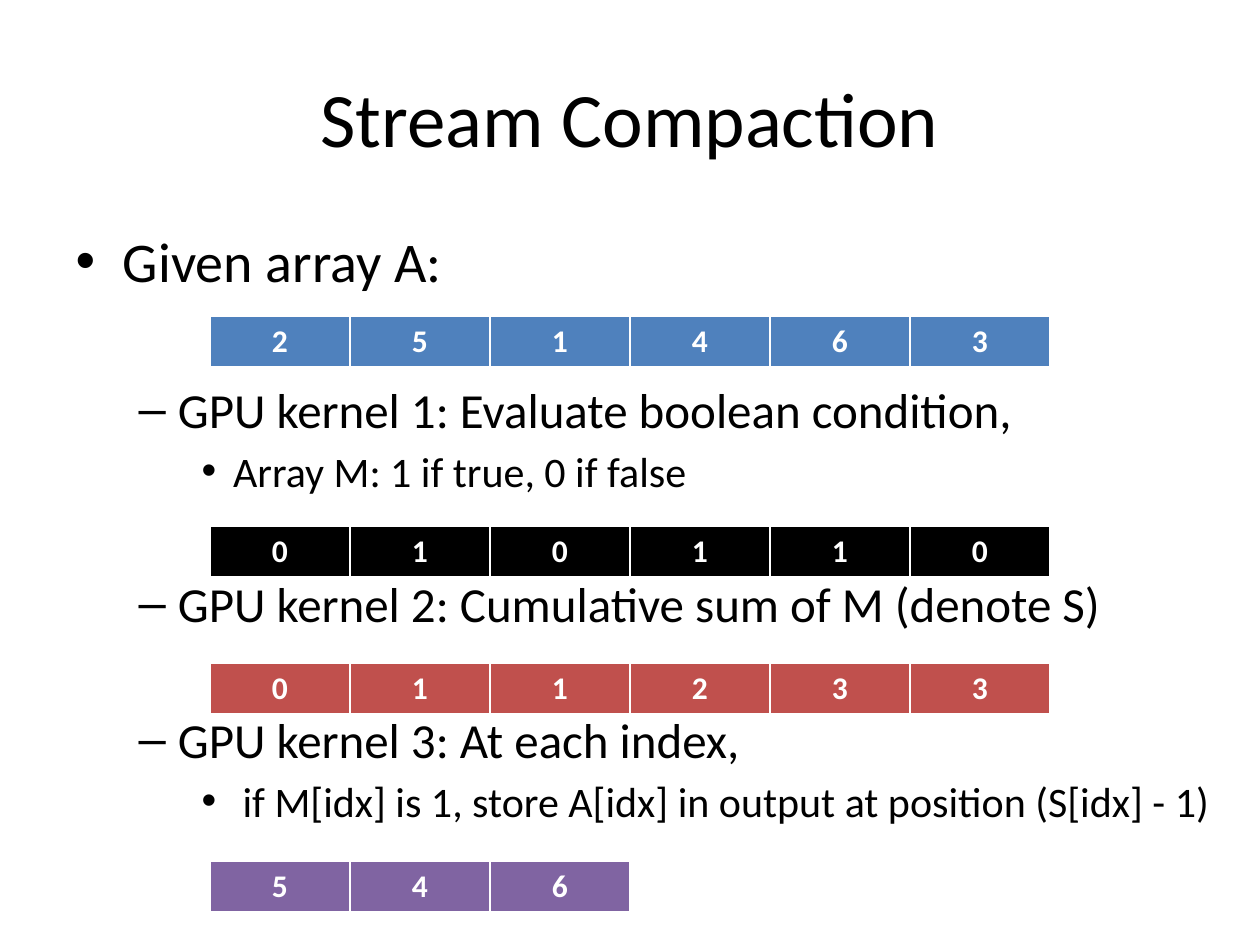
from lxml import etree
from pptx import Presentation
from pptx import util as u
from pptx.dml.color import RGBColor
from pptx.enum import text
from pptx.oxml.ns import qn

COLORS = {"ink": "000000", "white": "FFFFFF", "input": "4F81BD",
          "mask": "000000", "sum": "C0504D", "output": "8064A2"}
FONT = "Calibri"
TITLE = "Stream Compaction"
SIZES = [32, 28, 24]  # by list level

# level, space before in points (None: template default), text
STEPS = [
    (0, None, "Given array A:"),
    (1, 49, "GPU kernel 1: Evaluate boolean condition,"),
    (2, 4, "Array M: 1 if true, 0 if false"),
    (1, 44.5, "GPU kernel 2: Cumulative sum of M (denote S)"),
    (1, 44, "GPU kernel 3: At each index,"),
    (2, 4, " if M[idx] is 1, store A[idx] in output at position (S[idx] - 1)"),
]

# top in px, fill, values
ARRAYS = [
    (316, "input", [2, 5, 1, 4, 6, 3]),
    (526, "mask", [0, 1, 0, 1, 1, 0]),
    (663, "sum", [0, 1, 1, 2, 3, 3]),
    (861, "output", [5, 4, 6]),
]
ARRAY_LEFT, CELL_W, CELL_H = 210, 140, 52
BORDERS = {"lnL": 1, "lnR": 1, "lnT": 1, "lnB": 3}  # points


def px(n):
    return u.Emu(round(n * 914400 / 126))


def place(sp, left, top, width, height):
    sp.left, sp.top, sp.width, sp.height = map(px, (left, top, width, height))


def add_run(p, words, size, color, bold=False):
    r = p.add_run()
    r.text = words
    r.font.name, r.font.size, r.font.bold = FONT, u.Pt(size), bold
    r.font.color.rgb = RGBColor.from_string(COLORS[color])


def add_borders(cell):
    tc_pr = cell._tc.get_or_add_tcPr()
    for i, (tag, width) in enumerate(BORDERS.items()):
        ln = etree.Element(qn(f"a:{tag}"), w=str(u.Pt(width)))
        fill = etree.SubElement(ln, qn("a:solidFill"))
        etree.SubElement(fill, qn("a:srgbClr"), val=COLORS["white"])
        tc_pr.insert(i, ln)


def add_array(s, top, color, values):
    frame = s.shapes.add_table(1, len(values), px(ARRAY_LEFT), px(top),
                               px(CELL_W * len(values)), px(CELL_H))
    for column, value in zip(frame.table.columns, values):
        column.width = px(CELL_W)
    for cell, value in zip(frame.table.rows[0].cells, values):
        cell.fill.solid()
        cell.fill.fore_color.rgb = RGBColor.from_string(COLORS[color])
        add_borders(cell)
        p = cell.text_frame.paragraphs[0]
        p.alignment = text.PP_ALIGN.CENTER
        add_run(p, str(value), 18, "white", bold=True)


def main():
    prs = Presentation()
    prs.slide_width, prs.slide_height = px(1260), px(945)
    s = prs.slides.add_slide(prs.slide_layouts[1])

    # Title
    title = s.shapes.title
    place(title, 63, 38, 1134, 157)
    p = title.text_frame.paragraphs[0]
    p.alignment = text.PP_ALIGN.CENTER
    add_run(p, TITLE, 44, "ink")

    # Steps, spaced to leave room for the arrays
    body = s.placeholders[1]
    place(body, 63, 220, 1218, 735)
    tf = body.text_frame
    tf.auto_size = text.MSO_AUTO_SIZE.NONE
    for i, (level, before, words) in enumerate(STEPS):
        p = tf.add_paragraph() if i else tf.paragraphs[0]
        p.level = level
        if before is not None:
            p.space_before = u.Pt(before)
        add_run(p, words, SIZES[level], "ink")

    # Arrays
    for top, color, values in ARRAYS:
        add_array(s, top, color, values)

    prs.save("out.pptx")


if __name__ == "__main__":
    main()
